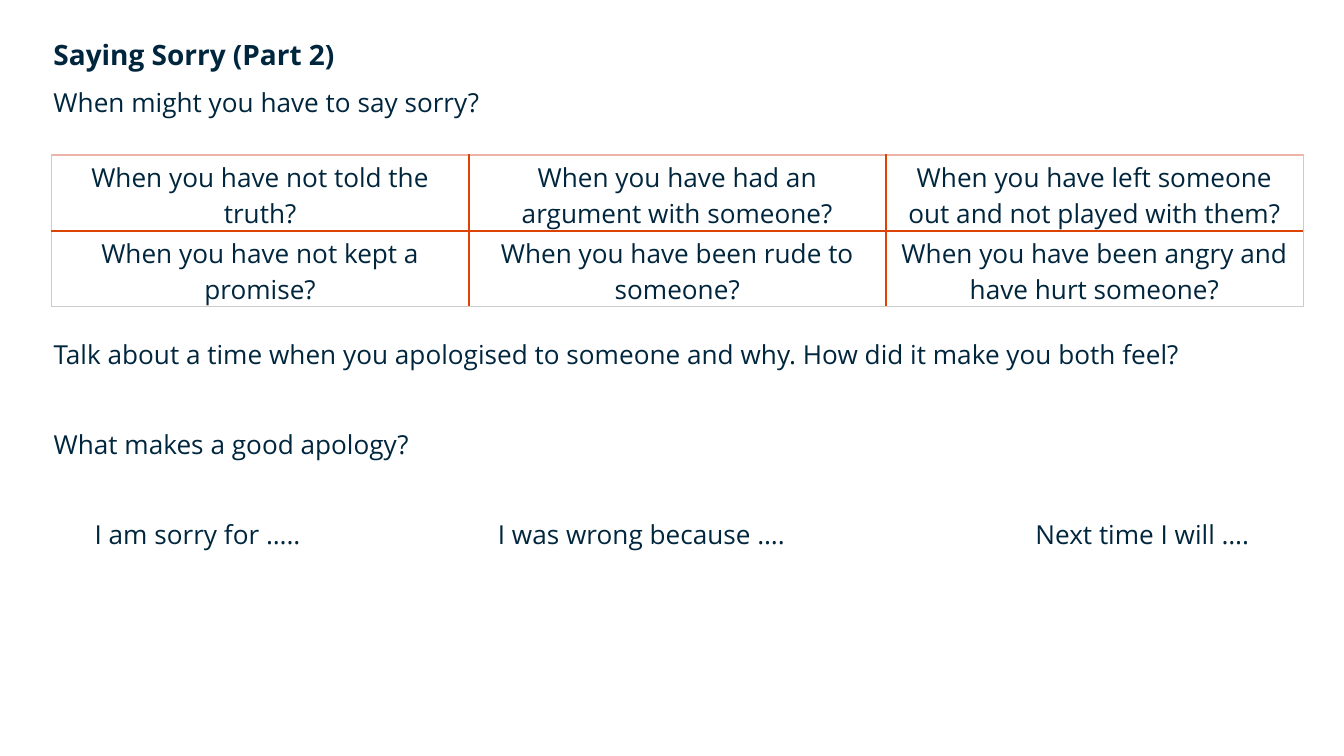
from lxml import etree
from pptx import Presentation
from pptx.dml.color import RGBColor
from pptx.enum.text import PP_ALIGN
from pptx.oxml.ns import qn
from pptx.util import Pt

CENTER = PP_ALIGN.CENTER
NAVY = RGBColor(0x00, 0x26, 0x3E)
ORANGE = RGBColor(0xDC, 0x44, 0x05)
PALE_RED = RGBColor(0xEC, 0xB4, 0xA8)
GREY = RGBColor(0xCC, 0xCC, 0xCC)
FONT = "Open Sans"


def add_text(paragraph, text, size=14, bold=False):
    run = paragraph.add_run()
    run.text = text
    run.font.name = FONT
    run.font.size = Pt(size)
    run.font.bold = bold
    run.font.color.rgb = NAVY


def add_box(left, top, width, height):
    frame = slide.shapes.add_textbox(Pt(left), Pt(top), Pt(width), Pt(height)).text_frame
    frame.word_wrap = True
    return frame


prs = Presentation()
prs.slide_width, prs.slide_height = Pt(720), Pt(405)
slide = prs.slides.add_slide(prs.slide_layouts[6])

# Title and opening question
title = add_box(21.6, 16.6, 360, 25)
add_text(title.paragraphs[0], "Saying Sorry (Part 2)", 15, True)

question = add_box(21.6, 41.8, 670, 51).paragraphs[0]
question.line_spacing = 1.07
add_text(question, "When might you have to say sorry?")

# Table of reasons, with orange lines between the cells
REASONS = [
    ["When you have not told the truth?",
     "When you have had an argument with someone?",
     "When you have left someone out and not played with them?"],
    ["When you have not kept a promise?",
     "When you have been rude to someone?",
     "When you have been angry and have hurt someone?"],
]
ROW_COUNT, COLUMN_COUNT = len(REASONS), len(REASONS[0])
reasons = slide.shapes.add_table(ROW_COUNT, COLUMN_COUNT, Pt(27.6), Pt(83),
                                 Pt(670.5), Pt(81.4)).table
reasons.first_row = reasons.horz_banding = False
for row, texts in enumerate(REASONS):
    for column, text in enumerate(texts):
        cell = reasons.cell(row, column)
        cell.margin_top, cell.margin_bottom = Pt(2.5), Pt(0)
        paragraph = cell.text_frame.paragraphs[0]
        paragraph.alignment = CENTER
        add_text(paragraph, text)

        inside, outside = (ORANGE, 1), (GREY, 0.5)
        borders = {
            "a:lnL": inside if column else outside,
            "a:lnR": inside if column < COLUMN_COUNT - 1 else outside,
            "a:lnT": inside if row else (PALE_RED, 1),
            "a:lnB": inside if row < ROW_COUNT - 1 else outside,
        }
        properties = cell._tc.get_or_add_tcPr()
        for tag, (color, width) in borders.items():
            line = etree.SubElement(properties, qn(tag), w=str(Pt(width)))
            fill = etree.SubElement(line, qn("a:solidFill"))
            etree.SubElement(fill, qn("a:srgbClr"), val=str(color))
        cell.fill.background()

# Discussion prompts
PROMPTS = [
    "Talk about a time when you apologised to someone and why. How did it make you both feel?",
    "What makes a good apology?",
    "\tI am sorry for …..\tI was wrong because ….\tNext time I will ….",
]
STARTER_STOPS = [22, 238, 526]
prompts = add_box(21.6, 177.8, 677, 126)
for index, text in enumerate(PROMPTS):
    paragraph = prompts.add_paragraph() if index else prompts.paragraphs[0]
    if index:
        paragraph.space_before = Pt(31.3)
    add_text(paragraph, text)

# The sentence starters sit on tab stops
tabs = etree.SubElement(paragraph._p.get_or_add_pPr(), qn("a:tabLst"))
for stop in STARTER_STOPS:
    etree.SubElement(tabs, qn("a:tab"), pos=str(Pt(stop)), algn="l")

prs.save("out.pptx")
